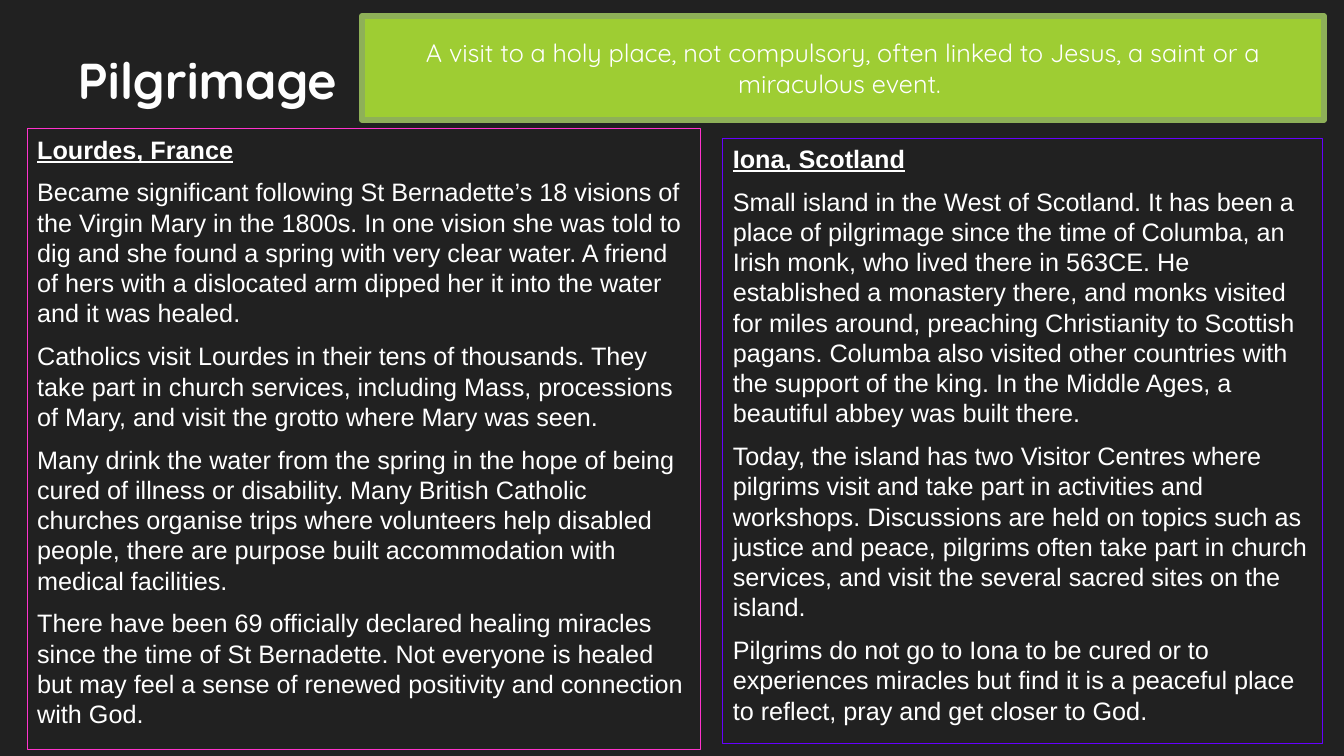
from pptx import Presentation
from pptx.dml.color import RGBColor
from pptx.enum.shapes import MSO_SHAPE as Shape
from pptx.enum.text import MSO_ANCHOR as Anchor, PP_ALIGN as Align
from pptx.oxml import parse_xml
from pptx.oxml.ns import nsdecls
from pptx.util import Inches, Pt

BODY_FONT = "Arial"
DISPLAY_FONT = "Quicksand"
WHITE = "FFFFFF"


def color(value):
    return RGBColor.from_string(value)


class SlideBuilder:
    """Holds the slide and the shared text style."""

    def __init__(self, deck, background):
        self.page = deck.slides.add_slide(deck.slide_layouts[5])
        fill = self.page.background.fill
        fill.solid()
        fill.fore_color.rgb = color(background)

    def place(self, box, area):
        box.left, box.top, box.width, box.height = map(Inches, area)

    def add_span(self, para, text, font, size=18, hue=WHITE, bold=False, underline=False):
        span = para.add_run()
        span.text = text
        span.font.name = font
        span.font.size = Pt(size)
        span.font.color.rgb = color(hue)
        span.font.bold = bold
        span.font.underline = underline
        return span

    def title(self, text, area):
        box = self.page.shapes.title
        self.place(box, area)
        frame = box.text_frame
        frame.word_wrap = True
        frame.vertical_anchor = Anchor.BOTTOM
        para = frame.paragraphs[0]
        para.alignment = Align.LEFT
        span = self.add_span(para, text, DISPLAY_FONT, 36, "FEFEFE", bold=True)
        # Soft text shadow, placed right after the font colour
        shadow = parse_xml(
            f'<a:effectLst {nsdecls("a")}><a:outerShdw blurRad="50800" dist="25400" dir="5400000">'
            '<a:srgbClr val="000000"><a:alpha val="60000"/></a:srgbClr></a:outerShdw></a:effectLst>')
        properties = span.font._element
        properties.insert(1, shadow)

    def rectangle(self, area, line, width, fill=None, anchor=Anchor.TOP):
        box = self.page.shapes.add_shape(Shape.RECTANGLE, *map(Inches, area))
        box.shadow.inherit = False
        if fill:
            box.fill.solid()
            box.fill.fore_color.rgb = color(fill)
        else:
            box.fill.background()
        box.line.color.rgb = color(line)
        box.line.width = Pt(width)
        box.text_frame.word_wrap = True
        box.text_frame.vertical_anchor = anchor
        return box.text_frame

    def banner(self, text, area):
        frame = self.rectangle(area, "8EB058", 4.33, "9ECD33", Anchor.MIDDLE)
        para = frame.paragraphs[0]
        para.alignment = Align.CENTER
        self.add_span(para, text, DISPLAY_FONT)

    def place_card(self, heading, paragraphs, area, line):
        frame = self.rectangle(area, line, 0.75)
        for index, text in enumerate([heading, *paragraphs]):
            is_heading = index == 0
            para = frame.paragraphs[0] if is_heading else frame.add_paragraph()
            para.alignment = Align.LEFT
            para.line_spacing = Pt(21.6)
            para.space_before = Pt(0 if is_heading else 9)
            self.add_span(para, text, BODY_FONT, bold=is_heading, underline=is_heading)


LOURDES = [
    "Became significant following St Bernadette’s 18 visions of the Virgin Mary in the 1800s. "
    "In one vision she was told to dig and she found a spring with very clear water. "
    "A friend of hers with a dislocated arm dipped her it into the water and it was healed.",
    "Catholics visit Lourdes in their tens of thousands. They take part in church services, "
    "including Mass, processions of Mary, and visit the grotto where Mary was seen.",
    "Many drink the water from the spring in the hope of being cured of illness or disability. "
    "Many British Catholic churches organise trips where volunteers help disabled people, "
    "there are purpose built accommodation with medical facilities.",
    "There have been 69 officially declared healing miracles since the time of St Bernadette. "
    "Not everyone is healed but may feel a sense of renewed positivity and connection with God.",
]
IONA = [
    "Small island in the West of Scotland. It has been a place of pilgrimage since the time of "
    "Columba, an Irish monk, who lived there in 563CE. He established a monastery there, and monks "
    "visited for miles around, preaching Christianity to Scottish pagans. Columba also visited other "
    "countries with the support of the king. In the Middle Ages, a beautiful abbey was built there.",
    "Today, the island has two Visitor Centres where pilgrims visit and take part in activities and "
    "workshops. Discussions are held on topics such as justice and peace, pilgrims often take part in "
    "church services, and visit the several sacred sites on the island.",
    "Pilgrims do not go to Iona to be cured or to experiences miracles but find it is a peaceful "
    "place to reflect, pray and get closer to God.",
]


def main():
    deck = Presentation()
    deck.slide_width, deck.slide_height = Inches(13.33), Inches(7.5)
    slide = SlideBuilder(deck, "212121")

    # Title
    slide.title("Pilgrimage", (0.67, -0.11, 12, 1.25))

    # The two places of pilgrimage
    slide.place_card("Lourdes, France", LOURDES, (0.27, 1.28, 6.68, 6.16), "FF33CC")
    slide.place_card("Iona, Scotland", IONA, (7.17, 1.37, 5.95, 6.01), "6600FF")

    # Definition
    slide.banner("A visit to a holy place, not compulsory, often linked to Jesus, "
                 "a saint or a miraculous event. ", (3.59, 0.16, 9.54, 1.03))

    deck.save("out.pptx")


if __name__ == "__main__":
    main()
